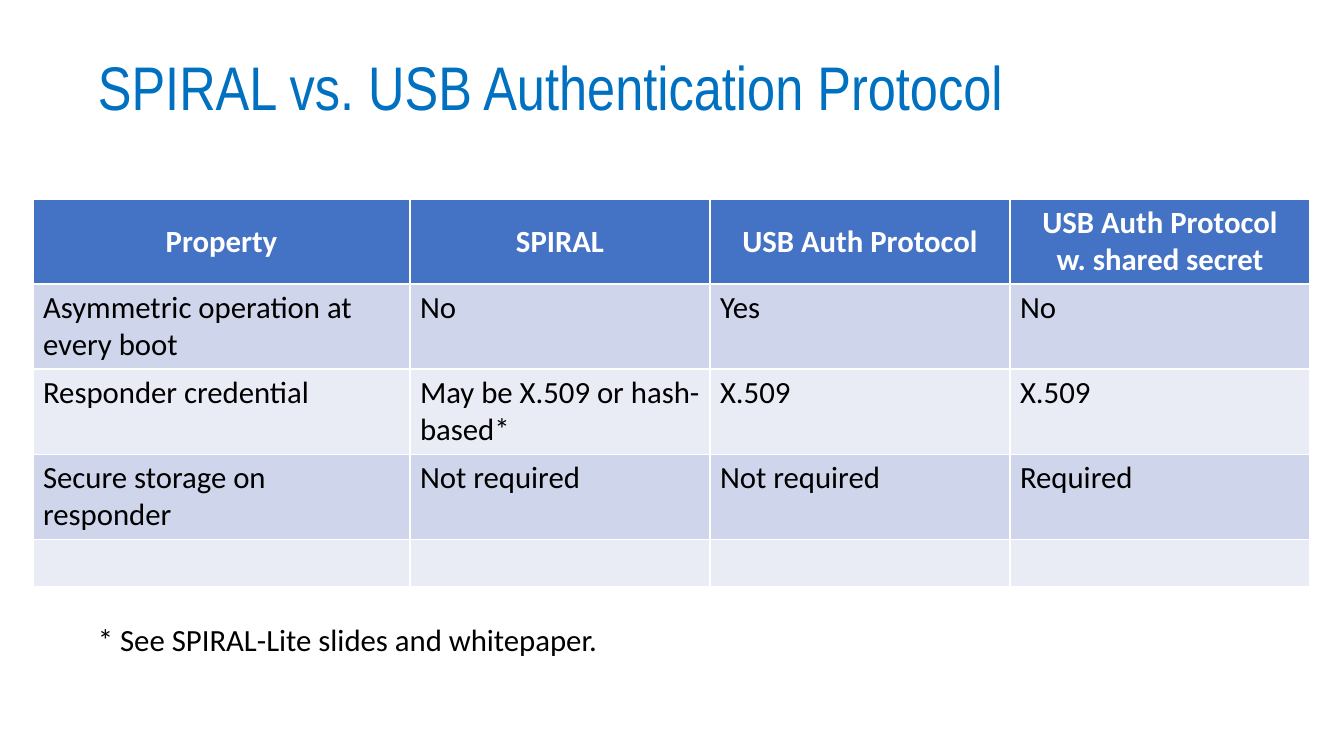
from dataclasses import dataclass

from pptx import Presentation
from pptx.dml.color import RGBColor
from pptx.enum.text import MSO_ANCHOR as Anchor, PP_ALIGN as Align
from pptx.util import Pt

EMU_PER_PX = 914400 / 100.8
COLORS = {
    "title": "0070C0",
    "header": "4472C4",
    "header_text": "FFFFFF",
    "odd_row": "CFD5EA",
    "even_row": "E9EBF5",
    "text": "000000",
}
BODY_FONT, BODY_SIZE = "Calibri", 22
COLUMN_WIDTHS = [377, 300, 300, 300]
TEXT_ROW_HEIGHT, EMPTY_ROW_HEIGHT = 85, 47
ROWS = [
    ["Property", "SPIRAL", "USB Auth Protocol", "USB Auth Protocol\nw. shared secret"],
    ["Asymmetric operation at every boot", "No", "Yes", "No"],
    ["Responder credential", "May be X.509 or hash-based*", "X.509", "X.509"],
    ["Secure storage on responder", "Not required", "Not required", "Required"],
    ["", "", "", ""],
]


@dataclass
class Label:
    text: str
    left: int
    top: int
    width: int
    height: int
    font: str
    size: int
    color: str
    anchor: Anchor = Anchor.TOP
    line_spacing: float = 1.0


LABELS = [
    Label("SPIRAL vs. USB Authentication Protocol", 88, 18, 1159, 146,
          "Arial Narrow", 44, "title", Anchor.MIDDLE, 0.9),
    Label("* See SPIRAL-Lite slides and whitepaper.", 88, 616, 607, 47,
          BODY_FONT, BODY_SIZE, "text"),
]


def px(length: int) -> int:
    return round(length * EMU_PER_PX)


def rgb(name: str) -> RGBColor:
    return RGBColor.from_string(COLORS[name])


def style_font(para, name: str, size: int, color: str, bold: bool = False) -> None:
    para.font.name = name
    para.font.size = Pt(size)
    para.font.bold = bold
    para.font.color.rgb = rgb(color)


def add_label(page, label: Label) -> None:
    box = page.shapes.add_textbox(
        px(label.left), px(label.top), px(label.width), px(label.height))
    frame = box.text_frame
    frame.word_wrap = True
    frame.vertical_anchor = label.anchor
    frame.text = label.text
    para = frame.paragraphs[0]
    para.line_spacing = label.line_spacing
    style_font(para, label.font, label.size, label.color)


def fill_cell(cell, text: str, row_index: int) -> None:
    is_header = row_index == 0
    band = "odd_row" if row_index % 2 else "even_row"
    cell.fill.solid()
    cell.fill.fore_color.rgb = rgb("header" if is_header else band)
    cell.vertical_anchor = Anchor.MIDDLE if is_header else Anchor.TOP
    cell.text = text
    for para in cell.text_frame.paragraphs:
        para.alignment = Align.CENTER if is_header else Align.LEFT
        style_font(para, BODY_FONT, BODY_SIZE,
                   "header_text" if is_header else "text", is_header)


def add_comparison(page, left: int, top: int) -> None:
    """Add the protocol table; its default style draws the white cell borders."""
    heights = [TEXT_ROW_HEIGHT if any(row) else EMPTY_ROW_HEIGHT for row in ROWS]
    table = page.shapes.add_table(
        len(ROWS), len(COLUMN_WIDTHS), px(left), px(top),
        px(sum(COLUMN_WIDTHS)), px(sum(heights))).table
    for column, width in zip(table.columns, COLUMN_WIDTHS):
        column.width = px(width)
    for row_index, (row, height) in enumerate(zip(ROWS, heights)):
        table.rows[row_index].height = px(height)
        for column_index, text in enumerate(row):
            fill_cell(table.cell(row_index, column_index), text, row_index)


def main() -> None:
    deck = Presentation()
    deck.slide_width, deck.slide_height = px(1344), px(756)
    page = deck.slides.add_slide(deck.slide_layouts[6])
    add_comparison(page, 33, 199)
    for label in LABELS:
        add_label(page, label)
    deck.save("out.pptx")


if __name__ == "__main__":
    main()
